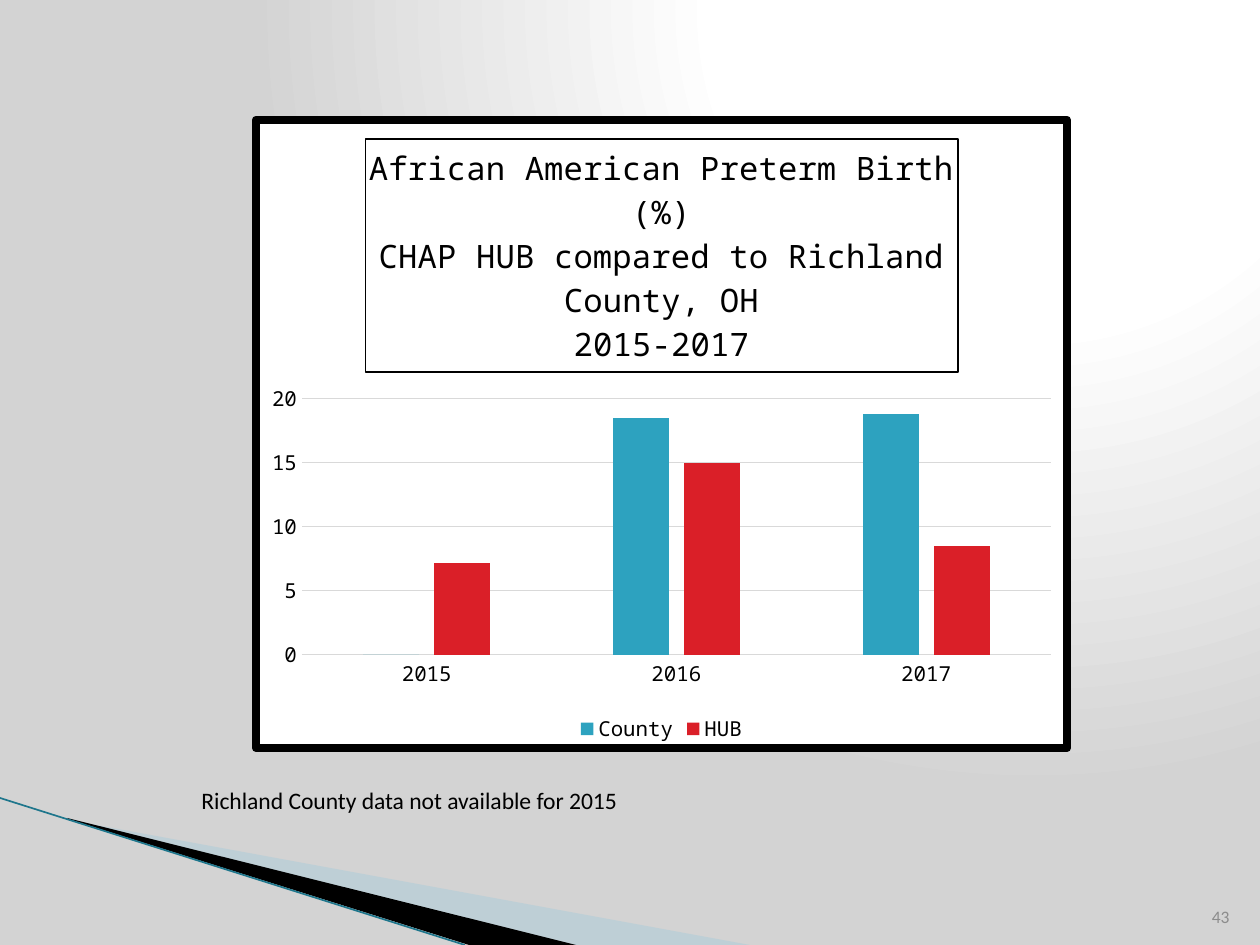
from lxml.etree import SubElement
from pptx import Presentation
from pptx.chart.data import CategoryChartData as ChartData
from pptx.dml.color import RGBColor as RGB
from pptx.enum.chart import XL_CHART_TYPE as Kind, XL_LEGEND_POSITION as Spot
from pptx.enum.chart import XL_TICK_MARK as Tick
from pptx.enum.shapes import MSO_CONNECTOR as Link
from pptx.enum.text import MSO_ANCHOR as Anchor, MSO_AUTO_SIZE as Fit, PP_ALIGN as Align
from pptx.oxml import parse_xml
from pptx.oxml.ns import nsdecls, qn
from pptx.util import Emu, Pt

INK = {
    "black": "000000", "white": "FFFFFF", "gray": "D3D3D3", "grid": "D9D9D9",
    "number": "8C8C8C", "pale": "A0CBDC", "edge": "1E768C",
    "county": "2DA2BF", "hub": "DA1F28",
}
SCALE = 914400 / 126
MONO, SANS = "Noto Sans Mono", "Calibri"


def px(*vals):
    return [Emu(round(v * SCALE)) for v in vals]


def rgb(name):
    return RGB.from_string(INK[name])


def style(font, face, size, color="black"):
    font.name, font.size, font.bold = face, Pt(size), False
    font.color.rgb = rgb(color)


def stroke(line, color, width):
    line.color.rgb = rgb(color)
    line.width = Pt(width)


class Deck:
    def __init__(self):
        self.prs = Presentation()
        self.prs.slide_width, self.prs.slide_height = px(1260, 945)
        self.slide = self.prs.slides.add_slide(self.prs.slide_layouts[6])
        self.shapes = self.slide.shapes

    def glow(self, stops):
        """Fill the background with a round gradient centred at the upper right."""
        marks = "".join(f'<a:gs pos="{at * 1000}"><a:srgbClr val="{INK[c]}"/></a:gs>'
                        for at, c in stops)
        bg = parse_xml(
            f'<p:bg {nsdecls("p", "a")}><p:bgPr><a:gradFill rotWithShape="1">'
            f'<a:gsLst>{marks}</a:gsLst><a:path path="circle">'
            '<a:fillToRect l="65000" b="98000"/></a:path></a:gradFill>'
            '<a:effectLst/></p:bgPr></p:bg>')
        self.slide.element.cSld.insert(0, bg)

    def wedge(self, points, color, alpha=100):
        pen = self.shapes.build_freeform(*points[0], scale=SCALE)
        pen.add_line_segments(points[1:], close=True)
        shape = pen.convert_to_shape()
        shape.shadow.inherit = False
        shape.line.fill.background()
        shape.fill.solid()
        shape.fill.fore_color.rgb = rgb(color)
        if alpha < 100:
            tint = shape.element.spPr.find(".//" + qn("a:srgbClr"))
            SubElement(tint, qn("a:alpha"), val=str(alpha * 1000))

    def line(self, ends, color, width):
        link = self.shapes.add_connector(Link.STRAIGHT, *px(*ends))
        stroke(link.line, color, width)
        SubElement(link.element.spPr, qn("a:effectLst"))

    def text(self, box, words, size, color="black", align=Align.LEFT,
             anchor=Anchor.TOP, wrap=True):
        shape = self.shapes.add_textbox(*px(*box))
        frame = shape.text_frame
        frame.word_wrap, frame.vertical_anchor = wrap, anchor
        frame.auto_size = Fit.NONE if wrap else Fit.SHAPE_TO_FIT_TEXT
        para = frame.paragraphs[0]
        para.text, para.alignment = words, align
        style(para.font, SANS, size, color)

    def chart(self, box, title, cats, series):
        data = ChartData()
        data.categories = cats
        for name, vals, _ in series:
            data.add_series(name, vals)
        chart = self.shapes.add_chart(Kind.COLUMN_CLUSTERED, *px(*box), data).chart
        style(chart.font, MONO, 10)
        self.frame(chart)
        self.title(chart, title)
        self.axes(chart)
        plot = chart.plots[0]
        plot.gap_width, plot.overlap, plot.vary_by_categories = 219, -27, False
        for bars, (_, _, color) in zip(plot.series, series):
            bars.format.fill.solid()
            bars.format.fill.fore_color.rgb = rgb(color)
            bars.invert_if_negative = False
        chart.has_legend = True
        chart.legend.position = Spot.BOTTOM
        chart.legend.include_in_layout = False
        style(chart.legend.font, MONO, 12)

    def frame(self, chart):
        """Give the chart area a white fill and a thick black border."""
        area = parse_xml(
            f'<c:spPr {nsdecls("c", "a")}><a:solidFill><a:srgbClr val="{INK["white"]}"/>'
            f'</a:solidFill><a:ln w="{Pt(4.33)}"><a:solidFill>'
            f'<a:srgbClr val="{INK["black"]}"/></a:solidFill><a:round/></a:ln></c:spPr>')
        chart.element.find(qn("c:chart")).addnext(area)

    def title(self, chart, rows):
        head = chart.chart_title
        head.include_in_layout = False
        stroke(head.format.line, "black", 0.75)
        frame = head.text_frame
        frame.text = "\n".join(rows)
        for para in frame.paragraphs:
            para.alignment = Align.CENTER
            style(para.font, MONO, 18.6)

    def axes(self, chart):
        cat, val = chart.category_axis, chart.value_axis
        for axis in (cat, val):
            axis.major_tick_mark = axis.minor_tick_mark = Tick.NONE
            style(axis.tick_labels.font, MONO, 12)
        stroke(cat.format.line, "grid", 0.75)
        val.format.line.fill.background()
        stroke(val.major_gridlines.format.line, "grid", 0.75)
        val.minimum_scale, val.maximum_scale, val.major_unit = 0, 20, 5


def main():
    deck = Deck()
    deck.glow([(0, "white"), (40, "white"), (100, "gray")])
    deck.wedge([(69, 820), (750, 945), (575, 945), (69, 819)], "pale", 40)
    deck.wedge([(67, 818), (576, 945), (469, 945), (68, 819)], "black")
    deck.line((0, 798, 465, 945), "edge", 0.95)
    deck.text((1192, 883, 50, 50), "43", 10, "number", Align.RIGHT, Anchor.BOTTOM)
    deck.chart(
        (252, 116, 819, 636),
        ["African American Preterm Birth (%)",
         "CHAP HUB compared to Richland County, OH", "2015-2017"],
        ["2015", "2016", "2017"],
        [("County", (0, 18.5, 18.8), "county"), ("HUB", (7.2, 15, 8.5), "hub")])
    deck.text((189, 780, 449, 42), "Richland County data not available for 2015",
              13.5, wrap=False)
    deck.prs.save("out.pptx")


if __name__ == "__main__":
    main()
